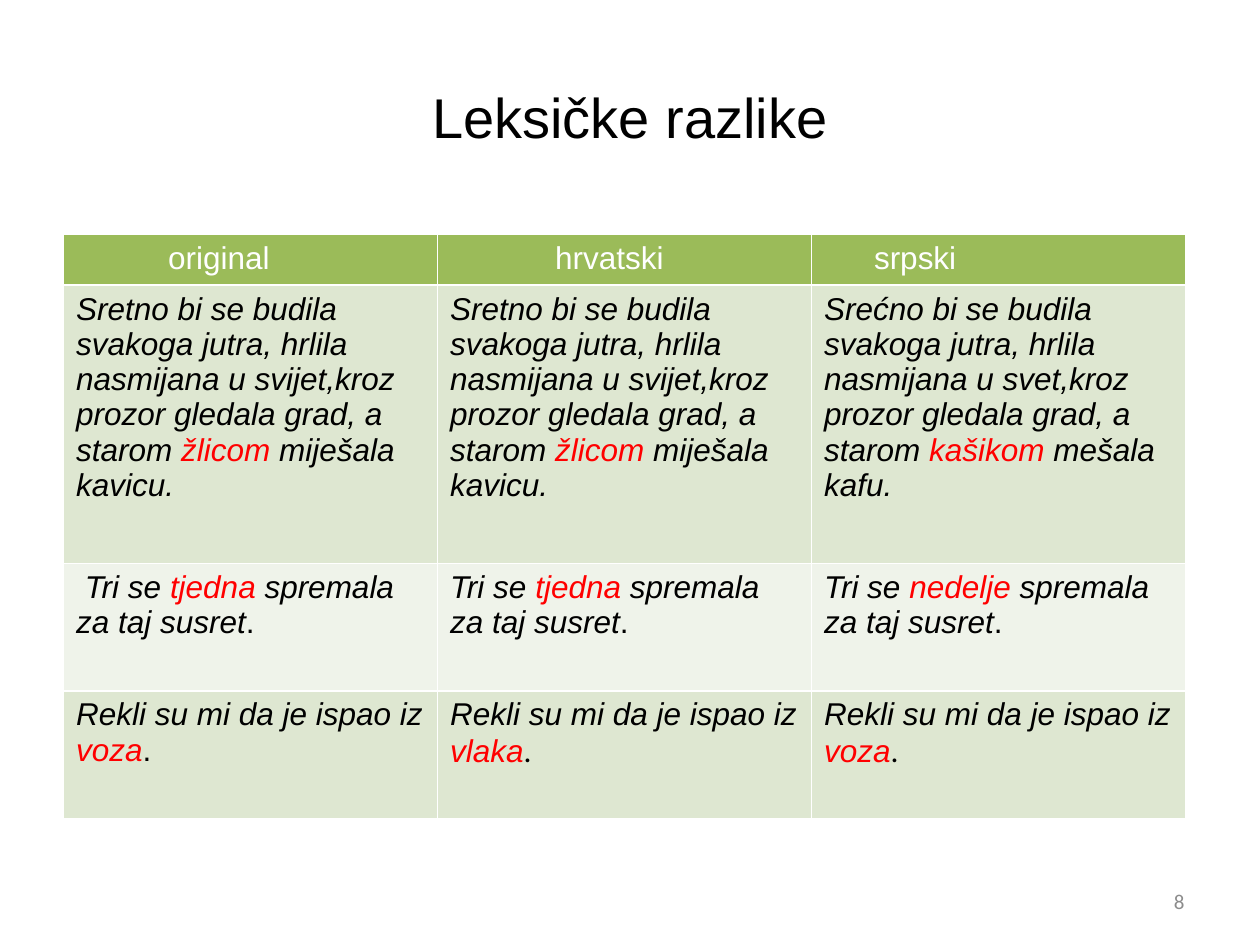
from lxml.etree import SubElement
from pptx import Presentation
from pptx.dml.color import RGBColor
from pptx.enum.text import MSO_ANCHOR, PP_ALIGN
from pptx.oxml.ns import qn
from pptx.util import Cm, Pt

COLORS = {
    "white": "FFFFFF", "black": "000000", "red": "FF0000", "number": "8C8C8C",
    "header": "9BBB59", "band": "DEE7D1", "light": "EFF3EA",
}
HEADERS = [("original", 2.11), ("hrvatski", 2.37), ("srpski", 1.26)]
ROW_HEIGHTS = [1.02, 5.61, 2.57, 2.57]
ROW_FILLS = ["band", "light", "band"]

MORNING = ("Sretno bi se budila svakoga jutra, hrlila nasmijana u svijet,kroz "
           "prozor gledala grad, a starom ")
MORNING_SERBIAN = MORNING.replace("Sretno", "Srećno").replace("svijet", "svet")
TRAIN = "Rekli su mi da je ispao iz "
MEETING = "spremala za taj susret"

# Each cell: opening, highlighted word, rest, full stop, font of the full stop
SENTENCES = [
    [(MORNING, "žlicom ", "miješala kavicu.", "", "Arial"),
     (MORNING, "žlicom ", "miješala kavicu.", "", "Arial"),
     (MORNING_SERBIAN, "kašikom ", "mešala kafu.", "", "Arial")],
    [(" Tri se ", "tjedna", " " + MEETING, ".", "Arial"),
     ("Tri se ", "tjedna", " " + MEETING, ".", "Arial"),
     ("Tri se ", "nedelje ", MEETING, ".", "Arial")],
    [(TRAIN, "voza", "", ".", "Arial"),
     (TRAIN, "vlaka", "", ".", "Calibri"),
     (TRAIN, "voza", "", ".", "Calibri")],
]


def rgb(name):
    return RGBColor.from_string(COLORS[name])


def add_run(p, text, size, color, font="Arial", italic=False):
    r = p.add_run()
    r.text = text
    r.font.name = font
    r.font.size = Pt(size)
    r.font.bold = False
    r.font.italic = italic
    r.font.color.rgb = rgb(color)


def add_text(slide, box, text, size, color, font, align):
    tf = slide.shapes.add_textbox(*map(Cm, box)).text_frame
    tf.word_wrap = True
    tf.vertical_anchor = MSO_ANCHOR.MIDDLE
    p = tf.paragraphs[0]
    p.alignment = align
    add_run(p, text, size, color, font)


def format_cell(cell, fill):
    """Give the cell white borders and a solid fill."""
    tcPr = cell._tc.get_or_add_tcPr()
    for side in "LRTB":
        ln = SubElement(tcPr, qn(f"a:ln{side}"), w=str(Pt(1)))
        solid = SubElement(ln, qn("a:solidFill"))
        SubElement(solid, qn("a:srgbClr"), val=COLORS["white"])
    cell.fill.solid()
    cell.fill.fore_color.rgb = rgb(fill)


def add_sentence(cell, sentence):
    opening, word, rest, stop, stop_font = sentence
    p = cell.text_frame.paragraphs[0]
    for text, color in ((opening, "black"), (word, "red"), (rest, "black")):
        if text:
            add_run(p, text, 18, color, italic=True)
    if stop:
        add_run(p, stop, 18, "black", stop_font)


def add_comparison_table(slide):
    table = slide.shapes.add_table(
        len(ROW_HEIGHTS), len(HEADERS),
        Cm(1.28), Cm(4.73), Cm(22.62), Cm(sum(ROW_HEIGHTS))).table
    for row, height in zip(table.rows, ROW_HEIGHTS):
        row.height = Cm(height)
    for column, (label, indent) in enumerate(HEADERS):
        cell = table.cell(0, column)
        format_cell(cell, "header")
        cell.margin_left = Cm(indent)
        add_run(cell.text_frame.paragraphs[0], label, 18, "white")
    for i, (sentences, fill) in enumerate(zip(SENTENCES, ROW_FILLS), start=1):
        for column, sentence in enumerate(sentences):
            cell = table.cell(i, column)
            format_cell(cell, fill)
            add_sentence(cell, sentence)


def main():
    prs = Presentation()
    prs.slide_width, prs.slide_height = Cm(25.4), Cm(19.05)
    slide = prs.slides.add_slide(prs.slide_layouts[6])
    add_comparison_table(slide)
    add_text(slide, (18.2, 17.66, 5.93, 1.01), "8", 12, "number", "Calibri",
             PP_ALIGN.RIGHT)
    add_text(slide, (1.27, 0.76, 22.86, 3.18), "Leksičke razlike", 32, "black",
             "Arial", PP_ALIGN.CENTER)
    prs.save("out.pptx")


if __name__ == "__main__":
    main()
